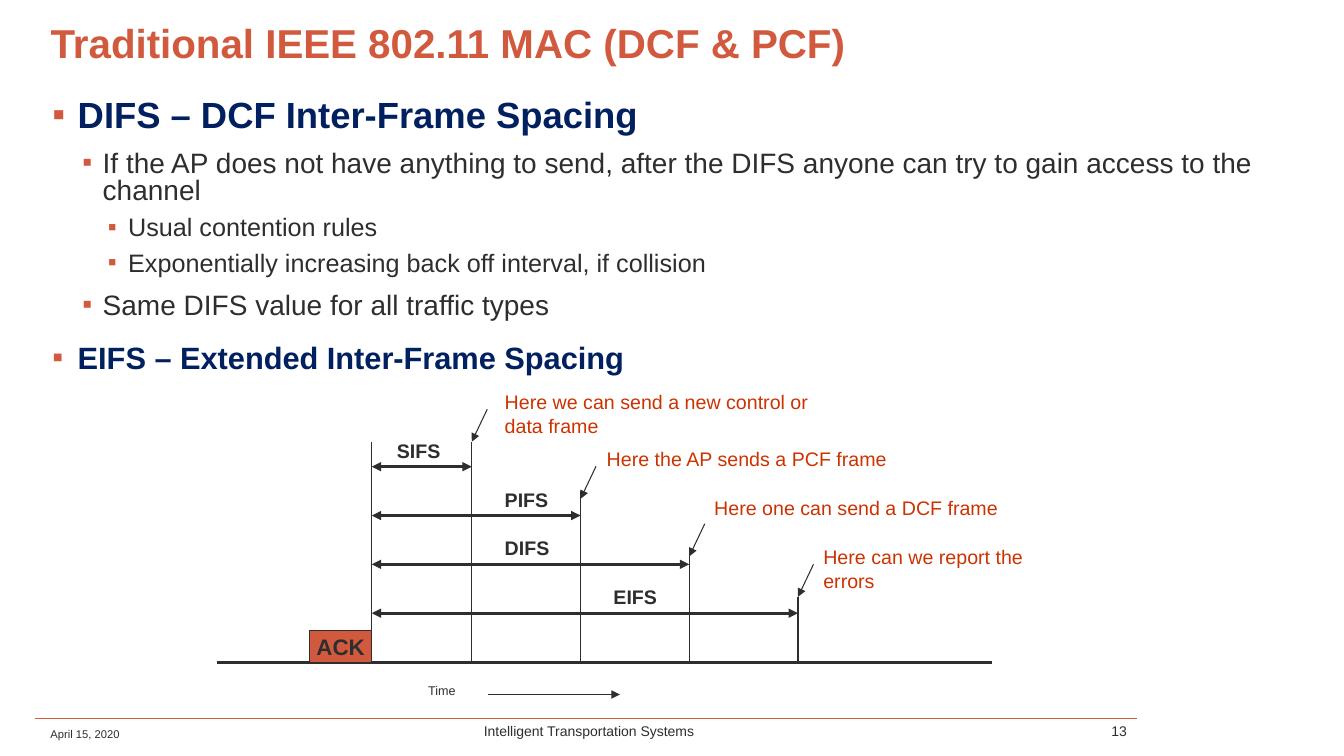
import dataclasses

import lxml.etree
import pptx
import pptx.dml.color
import pptx.enum.shapes
import pptx.enum.text
import pptx.oxml.ns
import pptx.util

Cm = pptx.util.Cm
Pt = pptx.util.Pt
Align = pptx.enum.text.PP_ALIGN
Anchor = pptx.enum.text.MSO_ANCHOR
qn = pptx.oxml.ns.qn
hue = pptx.dml.color.RGBColor.from_string


@dataclasses.dataclass(frozen=True)
class Theme:
    font: str = "Arial"
    ink: str = "2D2E2D"
    rust: str = "D15A3E"
    navy: str = "002060"
    red: str = "CC3300"
    title: float = 28.8
    head: float = 26
    sub: float = 22
    body: float = 20
    minor: float = 18
    ack: float = 16
    label: float = 14
    foot: float = 10
    time: float = 9
    date: float = 8
    thin: float = 0.75
    rule: float = 1
    thick: float = 2.25


theme = Theme()
deck = pptx.Presentation()
deck.slide_width = Cm(33.87)
deck.slide_height = Cm(19.05)
slide = deck.slides.add_slide(deck.slide_layouts[5])


def write(text, frame=None, at=None, size=theme.label, tint=theme.ink, bold=False,
          align=Align.LEFT, anchor=Anchor.TOP, wrap=True, space=None, gap=0, indent=None):
    if frame is None:
        frame = slide.shapes.add_textbox(*map(Cm, at)).text_frame
    frame.auto_size = pptx.enum.text.MSO_AUTO_SIZE.NONE
    frame.word_wrap = wrap
    frame.vertical_anchor = anchor
    para = frame.paragraphs[0]
    if para.runs:
        para = frame.add_paragraph()
    para.alignment = align
    para.line_spacing = space
    para.space_before = Pt(gap)
    if indent:
        left, hang = indent
        props = para._p.get_or_add_pPr()
        props.set("marL", str(Cm(left)))
        props.set("indent", str(-Cm(hang)))
        color = lxml.etree.SubElement(props, qn("a:buClr"))
        lxml.etree.SubElement(color, qn("a:srgbClr"), val=theme.rust)
        lxml.etree.SubElement(props, qn("a:buFont"), typeface=theme.font)
        lxml.etree.SubElement(props, qn("a:buChar"), char="▪")
    run = para.add_run()
    run.text = text
    run.font.name = theme.font
    run.font.size = Pt(size)
    run.font.bold = bold
    run.font.color.rgb = hue(tint)


def draw(start, end, width=theme.thin, tint=theme.ink, heads=()):
    line = slide.shapes.add_connector(
        pptx.enum.shapes.MSO_CONNECTOR.STRAIGHT, *map(Cm, (*start, *end)))
    line.line.width = Pt(width)
    line.line.color.rgb = hue(tint)
    stroke = line.line._get_or_add_ln()
    for head in heads:
        lxml.etree.SubElement(stroke, qn(head), type="triangle")
    lxml.etree.SubElement(line._element.spPr, qn("a:effectLst"))


title = slide.shapes.title
title.left, title.top, title.width, title.height = map(Cm, (1.02, 0.43, 31.95, 1.45))
write("Traditional IEEE 802.11 MAC (DCF & PCF)", frame=title.text_frame, size=theme.title,
      tint=theme.rust, bold=True, anchor=Anchor.MIDDLE, space=0.9)

body = slide.shapes.add_textbox(Cm(1.07), Cm(2.41), Cm(31.9), Cm(15.06)).text_frame
levels = [((0.64, 0.64), 18), ((1.27, 0.51), 12), ((1.91, 0.51), 8)]
points = [
    (0, theme.head, "DIFS – DCF Inter-Frame Spacing"),
    (1, theme.body, "If the AP does not have anything to send, after the DIFS "
                    "anyone can try to gain access to the channel"),
    (2, theme.minor, "Usual contention rules"),
    (2, theme.minor, "Exponentially increasing back off interval, if collision"),
    (1, theme.body, "Same DIFS value for all traffic types"),
    (0, theme.sub, "EIFS – Extended Inter-Frame Spacing"),
]
for rank, (level, size, text) in enumerate(points):
    indent, gap = levels[level]
    write(text, frame=body, size=size, tint=theme.ink if level else theme.navy,
          bold=level == 0, space=0.8, gap=gap if rank else 0, indent=indent)

draw((0.89, 18.11), (28.65, 18.11), width=theme.rule, tint=theme.rust)
write("April 15, 2020", at=(1.02, 18.11, 3.71, 0.76), size=theme.date, anchor=Anchor.MIDDLE)
write("Intelligent Transportation Systems", at=(4.78, 18.11, 20.12, 0.61), size=theme.foot,
      align=Align.CENTER, anchor=Anchor.MIDDLE)
write("13", at=(26.11, 18.11, 2.54, 0.61), size=theme.foot, align=Align.RIGHT,
      anchor=Anchor.MIDDLE)

base, origin = 16.69, 9.37
draw((5.46, base), (25, base), width=theme.thick)
ack = slide.shapes.add_shape(pptx.enum.shapes.MSO_SHAPE.RECTANGLE,
                             Cm(7.8), Cm(15.88), Cm(1.57), Cm(0.81))
ack.shadow.inherit = False
ack.fill.solid()
ack.fill.fore_color.rgb = hue(theme.rust)
ack.line.color.rgb = hue(theme.ink)
ack.line.width = Pt(theme.thin)
write("ACK", frame=ack.text_frame, size=theme.ack, bold=True, align=Align.CENTER,
      anchor=Anchor.MIDDLE, wrap=False)

draw((origin, base), (origin, 11.13))
spans = [
    ("SIFS", 9.75, 11.13, 11.13, "Here we can send a new control or data frame", 12.47, 9.7, 8.81),
    ("PIFS", 12.47, 12.37, 12.57, "Here the AP sends a PCF frame", 15.04, 11.13, 8.79),
    ("DIFS", 12.47, 13.82, 14.02, "Here one can send a DCF frame", 17.75, 12.37, 8.79),
    ("EIFS", 15.21, 15.04, 15.04, "Here can we report the errors", 20.5, 13.61, 6.45),
]
for rank, (name, left, top, tip, note, side, high, wide) in enumerate(spans):
    end = 11.89 + 2.74 * rank
    row = 11.76 + 1.23 * rank
    draw((end, base), (end, top))
    draw((origin, row), (end, row), width=theme.thick, heads=("a:headEnd", "a:tailEnd"))
    draw((end + 0.39, tip - 0.82), (end, tip), heads=("a:tailEnd",))
    write(name, at=(left, row - 0.83, 1.75, 1.04), bold=True)
    write(note, at=(side, high, wide, 1.04), tint=theme.red)

write("Time", at=(10.54, 17.09, 1.37, 0.79), size=theme.time)
draw((12.29, 17.5), (15.62, 17.5), heads=("a:tailEnd",))

deck.save("out.pptx")
